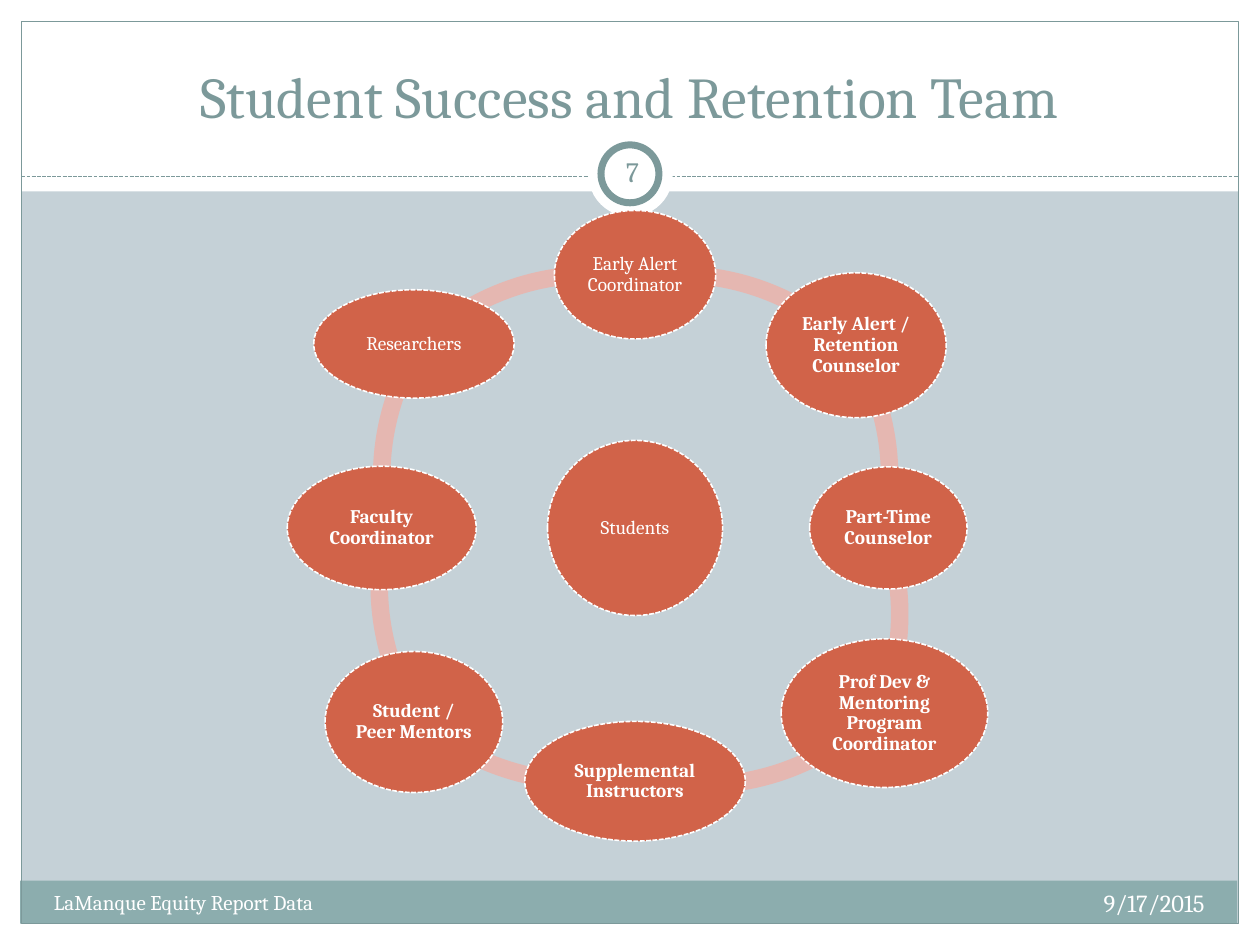
from lxml import etree
from pptx import Presentation
from pptx.dml.color import RGBColor
from pptx.enum.dml import MSO_LINE
from pptx.enum.shapes import MSO_CONNECTOR, MSO_SHAPE
from pptx.enum.text import MSO_ANCHOR, PP_ALIGN
from pptx.oxml.ns import qn
from pptx.util import Inches, Pt

RECTANGLE, OVAL, ARC = MSO_SHAPE.RECTANGLE, MSO_SHAPE.OVAL, MSO_SHAPE.BLOCK_ARC
LEFT, CENTER, RIGHT = PP_ALIGN.LEFT, PP_ALIGN.CENTER, PP_ALIGN.RIGHT
TOP, MIDDLE, BOTTOM = MSO_ANCHOR.TOP, MSO_ANCHOR.MIDDLE, MSO_ANCHOR.BOTTOM
DASH = MSO_LINE.SQUARE_DOT
COLORS = {
    "panel": "C5D1D7", "white": "FFFFFF", "footer": "8CADAE",
    "accent": "7C999A", "arc": "E5B7B1", "node": "D16349",
}
COLORS = {role: RGBColor.from_string(value) for role, value in COLORS.items()}

prs = Presentation()
prs.slide_width, prs.slide_height = Inches(10), Inches(7.5)
UNIT = prs.slide_width // 10  # the grid has 10 columns and 7.5 rows
slide = prs.slides.add_slide(prs.slide_layouts[5])
slide.background.fill.solid()
slide.background.fill.fore_color.rgb = COLORS["panel"]


def add_figure(kind, box, fill=None, line=None, width=0.75):
    """Add a preset shape; box is left, top, width, height in grid units."""
    figure = slide.shapes.add_shape(kind, *[round(v * UNIT) for v in box])
    figure.shadow.inherit = False
    if fill:
        figure.fill.solid()
        figure.fill.fore_color.rgb = COLORS[fill]
    else:
        figure.fill.background()
    if line:
        figure.line.color.rgb = COLORS[line]
        figure.line.width = Pt(width)
    else:
        figure.line.fill.background()
    return figure


def write(holder, text, size, color, align, anchor, inset=None, bold=False):
    frame = holder.text_frame
    frame.text = text
    frame.word_wrap = True
    frame.vertical_anchor = anchor
    if inset is not None:
        frame.margin_left = frame.margin_right = Inches(inset)
        frame.margin_top = frame.margin_bottom = Inches(inset)
    paragraph = frame.paragraphs[0]
    paragraph.alignment = align
    font = paragraph.runs[0].font
    font.name, font.size, font.bold = "Cambria", Pt(size), bold
    font.color.rgb = COLORS[color]
    return paragraph


# Slide frame: white margins, header and footer bands
MARGIN = 0.17
for box, fill in [
    ((0, 7.5 - MARGIN, 10, MARGIN), "white"),
    ((0, 0, 10, 1.52), "white"),
    ((0, 0, MARGIN, 7.5), "white"),
    ((10 - MARGIN, 0, MARGIN, 7.5), "white"),
    ((0.16, 6.99, 9.66, 0.34), "footer"),
]:
    add_figure(RECTANGLE, box, fill)
add_figure(RECTANGLE, (MARGIN, MARGIN, 10 - 2 * MARGIN, 7.5 - 2 * MARGIN), line="accent")

divider = slide.shapes.add_connector(
    MSO_CONNECTOR.STRAIGHT,
    *[round(v * UNIT) for v in (MARGIN, 1.4, 10 - MARGIN, 1.4)])
divider.line.color.rgb = COLORS["accent"]
divider.line.width = Pt(0.75)
divider.line.dash_style = DASH
etree.SubElement(divider._element.spPr, qn("a:effectLst"))

add_figure(OVAL, (4.67, 1.05, 0.67, 0.67), "white")
add_figure(OVAL, (4.77, 1.15, 0.46, 0.46), "white", "accent", 4)

# Title, brought in front of the header band
title = slide.shapes.title
title.left, title.top, title.width, title.height = [
    round(v * UNIT) for v in (0.33, 0.25, 9.33, 0.83)]
write(title, "Student Success and Retention Team", 33, "accent", CENTER, BOTTOM)
slide.shapes._spTree.append(title._element)

for text, box, size, color, align, anchor, inset in [
    ("9/17/2015", (6.33, 7, 3.33, 0.4), 14, "white", RIGHT, TOP, None),
    ("LaManque Equity Report Data", (0.33, 7.01, 3.92, 0.4), 12, "white", LEFT, TOP, None),
    ("7", (4.77, 1.12, 0.5, 0.48), 16, "accent", CENTER, MIDDLE, 0.05),
]:
    label = slide.shapes.add_textbox(*[round(v * UNIT) for v in box])
    write(label, text, size, color, align, anchor, inset)

# Ring segments: left, top, start and end angle in degrees
RING = 4.09
for left, top, start, end in [
    (2.66, 2.11, 225.02, 279.56),
    (2.96, 1.74, 168.52, 211.48),
    (2.94, 2.6, 147.75, 193.37),
    (2.58, 2.18, 78.21, 131.96),
    (3.52, 2.21, 44.13, 105.24),
    (3.12, 2.83, 340.05, 22.97),
    (3.04, 1.74, 328.67, 11.43),
    (3.33, 2.11, 260.55, 315.21),
]:
    segment = add_figure(ARC, (left, top, RING, RING), "arc")
    # one degree is 60000 angle units, and adjustments count in 100000
    segment.adjustments[0] = start * 0.6
    segment.adjustments[1] = end * 0.6
    segment.adjustments[2] = 0.034

# Team members around the students: text, centre x and y, width, height, bold
HUB_X, HUB_Y, REACH = 5.04, 4.19, 2.01
SIDE = 1.755
for text, x, y, width, height, bold in [
    ("Students", HUB_X, HUB_Y, 1.39, 1.39, False),
    ("Early Alert Coordinator", HUB_X, HUB_Y - REACH, 1.28, 1.02, False),
    ("Early Alert / Retention Counselor", HUB_X + SIDE, 2.74, 1.43, 1.15, True),
    ("Part-Time Counselor", HUB_X + REACH, HUB_Y, 1.25, 0.97, True),
    ("Prof Dev & Mentoring Program Coordinator", 7.02, 5.66, 1.64, 1.18, True),
    ("Supplemental Instructors", HUB_X, HUB_Y + REACH, 1.75, 0.95, True),
    ("Student / Peer Mentors", HUB_X - SIDE, 5.73, 1.41, 1.12, True),
    ("Faculty Coordinator", HUB_X - REACH, HUB_Y, 1.5, 0.98, True),
    ("Researchers", HUB_X - SIDE, 2.73, 1.59, 0.86, False),
]:
    member = add_figure(
        OVAL, (x - width / 2, y - height / 2, width, height), "node", "white", 0.9)
    member.line.dash_style = DASH
    role = write(member, text, 11, "white", CENTER, MIDDLE, 0.02, bold)
    role.line_spacing = 0.9

prs.save("out.pptx")
